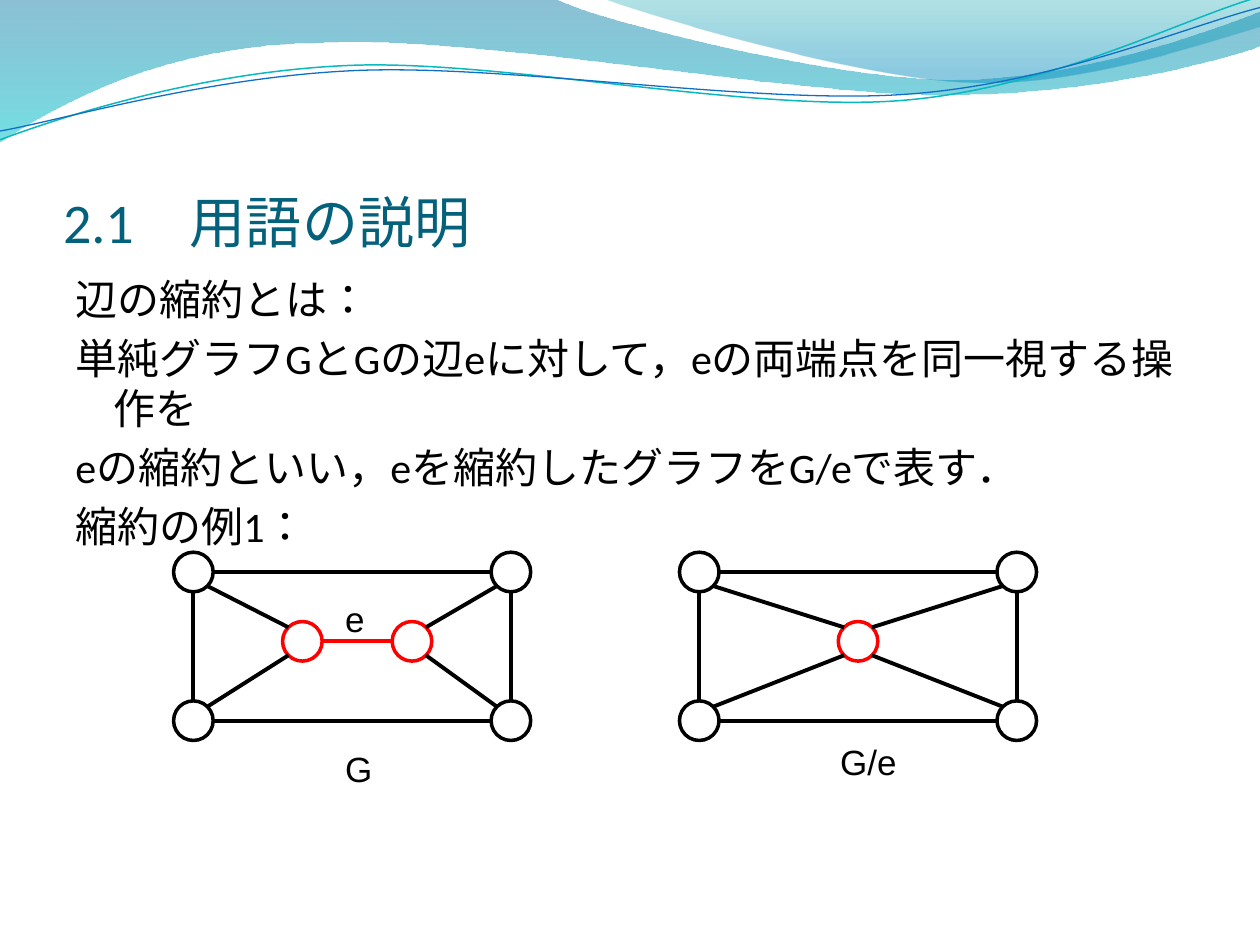
from math import sqrt
from lxml.etree import SubElement
from pptx import Presentation
from pptx.dml.color import RGBColor
from pptx.enum.lang import MSO_LANGUAGE_ID as LANG
from pptx.enum.shapes import MSO_CONNECTOR as CONN, MSO_SHAPE as SHAPE
from pptx.enum.text import MSO_ANCHOR as ANCHOR, PP_ALIGN as ALIGN
from pptx.oxml.ns import qn
from pptx.util import Inches, Pt

THEME = dict(
    title="04617B", ink="000000", accent="FF0000", teal="0AB8BF", blue="0F6FC6",
    font="Calibri", label_font="Arial", title_size=32, body_size=24, label_size=20,
    node_line=2, edge_line=2.25,
)

TITLE = "2.1　用語の説明"
BODY = [
    "辺の縮約とは：",
    "単純グラフGとGの辺eに対して，eの両端点を同一視する操作を",
    "eの縮約といい，eを縮約したグラフをG/eで表す．",
    "縮約の例1：",
]

BANDS = [
    ([[(0, -0.01)], [(4.4, -0.01)],
      [(4.76, 0.17), (6.64, 0.63), (7.58, 0.63)],
      [(8.53, 0.63), (9.58, 0.26), (10, 0.09)], [(10.01, 0.36)],
      [(9.83, 0.44), (8.7, 0.76), (7.46, 0.75)],
      [(6.22, 0.75), (3.82, 0.28), (2.57, 0.34)],
      [(1.29, 0.35), (0.46, 0.83), (-0.01, 1.13)], [(0, -0.01)]],
     [(0, "0074A1", 45), (1, "00C6CF", 55)]),
    ([[(4.79, -0.01)],
      [(5.09, 0.11), (6.82, 0.62), (7.69, 0.65)],
      [(8.56, 0.69), (9.61, 0.32), (10, 0.21)], [(10, 0)], [(4.79, -0.01)]],
     [(0, "00A1A9", 30), (0.8, "008BBF", 45)]),
]
WAVES = [
    ([[(0, 1.11)], [(0.48, 0.93), (1.58, 0.57), (2.77, 0.52)],
      [(3.95, 0.47), (5.93, 0.89), (7.13, 0.8)],
      [(8.33, 0.71), (9.38, 0.15), (9.98, -0.02)]], "teal", 0.85),
    ([[(0, 1.04)], [(0.47, 0.96), (1.64, 0.61), (2.83, 0.56)],
      [(4.03, 0.51), (5.97, 0.83), (7.17, 0.75)],
      [(8.36, 0.67), (9.41, 0.21), (10, 0.06)]], "blue", 0.75),
]

RADIUS = 0.157
TOP, MIDDLE, BOTTOM = 4.54, 5.09, 5.72
SPAN = 2.52
GRAPHS = [(1.535, (2.4, 3.27)), (5.55, (6.81,))]
LABELS = [("e", 2.64, 4.69, 0.36), ("G", 2.64, 5.88, 0.42), ("G/e", 6.57, 5.83, 0.65)]


def rgb(name):
    return RGBColor.from_string(THEME.get(name, name))


def add_curve(slide, segments, close):
    points = [tuple(map(Inches, point)) for segment in segments for point in segment]
    builder = slide.shapes.build_freeform(*points[0])
    builder.add_line_segments(points[1:], close=close)
    sp = builder.convert_to_shape()
    sp.shadow.inherit = False
    lines = iter(list(sp._element.iter(qn("a:lnTo"))))
    for segment in segments[1:]:
        first, *rest = [next(lines) for _ in segment]
        if rest:
            first.tag = qn("a:cubicBezTo")
            for line in rest:
                first.append(line[0])
                line.getparent().remove(line)
    return sp


def add_band(slide, segments, stops):
    sp = add_curve(slide, segments, True)
    sp.line.fill.background()
    sp.fill.gradient()
    sp.fill.gradient_angle = 270
    for stop, (position, color, _) in zip(sp.fill.gradient_stops, stops):
        stop.position = position
        stop.color.rgb = rgb(color)
    for clr, (_, _, opacity) in zip(sp._element.spPr.iter(qn("a:srgbClr")), stops):
        SubElement(clr, qn("a:alpha")).set("val", str(opacity * 1000))


def add_wave(slide, segments, color, width):
    sp = add_curve(slide, segments, False)
    sp.fill.background()
    sp.line.color.rgb = rgb(color)
    sp.line.width = Pt(width)


def style(p, font, size, color):
    p.font.name, p.font.size, p.font.color.rgb = THEME[font], Pt(THEME[size]), rgb(color)
    for r in p.runs:
        r.font.language_id = LANG.JAPANESE


def add_title(slide):
    s = slide.shapes.title
    s.left, s.top, s.width, s.height = map(Inches, (0.5, 0.77, 9, 1.25))
    tf = s.text_frame
    tf.text = TITLE
    tf.vertical_anchor = ANCHOR.BOTTOM
    tf.margin_left = tf.margin_right = tf.margin_bottom = 0
    tf.paragraphs[0].alignment = ALIGN.LEFT
    style(tf.paragraphs[0], "font", "title_size", "title")


def add_body(slide):
    tf = slide.shapes.add_textbox(*map(Inches, (0.5, 2.12, 9, 4.8))).text_frame
    tf.word_wrap = True
    tf.text = "\n".join(BODY)
    for p in tf.paragraphs:
        style(p, "font", "body_size", "ink")
        p.space_before = Pt(4.8)
        pPr = p._p.get_or_add_pPr()
        pPr.set("marL", str(Inches(0.3)))
        pPr.set("indent", str(-Inches(0.3)))


def add_node(slide, center, color):
    x, y = center
    sp = slide.shapes.add_shape(
        SHAPE.OVAL, *map(Inches, (x - RADIUS, y - RADIUS, 2 * RADIUS, 2 * RADIUS)))
    sp.shadow.inherit = False
    sp.fill.background()
    sp.line.color.rgb = rgb(color)
    sp.line.width = Pt(THEME["node_line"])


def add_edge(slide, start, end, color="ink"):
    (x1, y1), (x2, y2) = start, end
    sx, sy = (x2 > x1) - (x2 < x1), (y2 > y1) - (y2 < y1)
    reach = RADIUS / sqrt(abs(sx) + abs(sy))
    dx, dy = sx * reach, sy * reach
    line = slide.shapes.add_connector(
        CONN.STRAIGHT, *map(Inches, (x1 + dx, y1 + dy, x2 - dx, y2 - dy)))
    line.line.color.rgb = rgb(color)
    line.line.width = Pt(THEME["edge_line"])
    SubElement(line._element.spPr, qn("a:effectLst"))


def add_graph(slide, left, inner_xs):
    right = left + SPAN
    inner = [(x, MIDDLE) for x in inner_xs]
    top_left, top_right = (left, TOP), (right, TOP)
    bottom_left, bottom_right = (left, BOTTOM), (right, BOTTOM)
    for corner in (top_left, bottom_left, top_right, bottom_right):
        add_node(slide, corner, "ink")
    for center in inner:
        add_node(slide, center, "accent")
    for start, end in [
        (top_left, top_right), (bottom_left, bottom_right),
        (bottom_left, inner[0]), (top_left, inner[0]), (top_left, bottom_left),
        (inner[-1], top_right), (inner[-1], bottom_right), (top_right, bottom_right),
    ]:
        add_edge(slide, start, end)
    for start, end in zip(inner, inner[1:]):
        add_edge(slide, start, end, "accent")


def add_label(slide, text, x, y, width):
    tf = slide.shapes.add_textbox(*map(Inches, (x, y, width, 0.44))).text_frame
    tf.word_wrap = False
    tf.text = text
    style(tf.paragraphs[0], "label_font", "label_size", "ink")


def main():
    prs = Presentation()
    prs.slide_width, prs.slide_height = Inches(10), Inches(7.5)
    slide = prs.slides.add_slide(prs.slide_layouts[5])
    for band in BANDS:
        add_band(slide, *band)
    for wave in WAVES:
        add_wave(slide, *wave)
    add_title(slide)
    add_body(slide)
    for graph in GRAPHS:
        add_graph(slide, *graph)
    for label in LABELS:
        add_label(slide, *label)
    prs.save("out.pptx")


if __name__ == "__main__":
    main()
